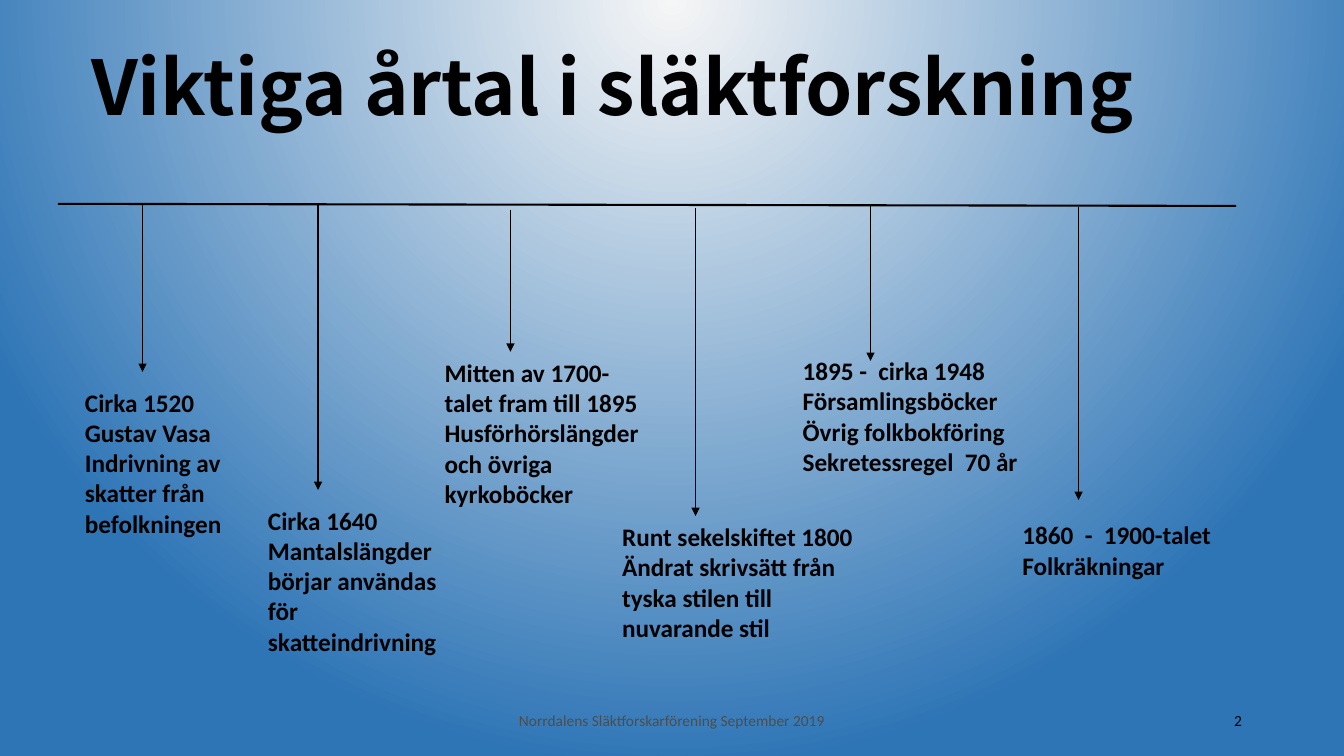
import pptx
import pptx.util
import pptx.dml.color
import pptx.enum.shapes
import pptx.enum.text
import pptx.oxml
import pptx.oxml.ns

Pt = pptx.util.Pt
RGBColor = pptx.dml.color.RGBColor
ALIGN = pptx.enum.text.PP_ALIGN
ANCHOR = pptx.enum.text.MSO_ANCHOR

BLACK = RGBColor(0x00, 0x00, 0x00)
GRAY = RGBColor(0x4D, 0x4D, 0x4D)
LIGHT = RGBColor(0xF6, 0xF6, 0xF6)
BLUE = RGBColor(0x2E, 0x75, 0xB6)

# Content
TITLE = "Viktiga årtal i släktforskning"
FOOTER = "Norrdalens Släktforskarförening September 2019"
PAGE_NUMBER = "2"

# Each event: arrow (x, top, bottom), text box (left, top, width, height), paragraphs
EVENTS = [
    ((101.8, 145.5, 265.7), (53.6, 272.9, 126.7, 116.6),
     ["Cirka 1520", "Gustav Vasa", "Indrivning av skatter från befolkningen"]),
    ((227.2, 145.5, 350), (184.3, 357.1, 152.6, 116.6),
     ["Cirka 1640", "Mantalslängder börjar användas för skatteindrivning"]),
    ((364.6, 149.8, 251.3), (310.5, 251.6, 158.4, 116.6),
     ["Mitten av 1700-talet fram till 1895", "Husförhörslängder",
      "och övriga kyrkoböcker"]),
    ((496.8, 148.3, 368.6), (437.3, 368.9, 190, 94.3),
     ["Runt sekelskiftet 1800",
      "Ändrat skrivsätt från tyska stilen till nuvarande stil"]),
    ((621.8, 146.9, 257.8), (566.3, 250.3, 172.8, 94.3),
     ["1895 -  cirka 1948", "Församlingsböcker", "Övrig folkbokföring",
      "Sekretessregel  70 år"]),
    ((770.4, 147.6, 357.1), (723.2, 367.6, 159.8, 51.1),
     ["1860  -  1900-talet", "Folkräkningar"]),
]

# Formats
TITLE_FONT = {"name": "Noto Sans CJK KR", "size": Pt(54), "bold": True}
EVENT_FONT = {"name": "Calibri", "size": Pt(18), "bold": True}
SMALL_FONT = {"name": "Calibri", "size": Pt(11), "bold": False}


def set_attributes(target, values):
    for name, value in values.items():
        setattr(target, name, value)


def write_text(shape, lines, font, color=BLACK, anchor=ANCHOR.TOP, **paragraph_format):
    frame = shape.text_frame
    set_attributes(frame, {"text": "\n".join(lines), "word_wrap": True,
                           "auto_size": pptx.enum.text.MSO_AUTO_SIZE.NONE,
                           "vertical_anchor": anchor})
    for paragraph in frame.paragraphs:
        set_attributes(paragraph, paragraph_format)
        for run in paragraph.runs:
            set_attributes(run.font, font)
            run.font.color.rgb = color


def add_text(box, lines, font, **options):
    shape = slide.shapes.add_textbox(*map(Pt, box))
    write_text(shape, lines, font, **options)


def add_line(start, end, width, arrow=False):
    connector = slide.shapes.add_connector(
        pptx.enum.shapes.MSO_CONNECTOR.STRAIGHT, *map(Pt, start + end))
    connector.line.width = Pt(width)
    connector.line.color.rgb = BLACK
    properties = connector._element.spPr
    namespace = pptx.oxml.ns.nsdecls("a")
    if arrow:
        properties.find(pptx.oxml.ns.qn("a:ln")).append(
            pptx.oxml.parse_xml(f'<a:tailEnd {namespace} type="triangle"/>'))
    properties.append(pptx.oxml.parse_xml(f"<a:effectLst {namespace}/>"))


presentation = pptx.Presentation()
presentation.slide_width = Pt(960)
presentation.slide_height = Pt(540)
slide = presentation.slides.add_slide(presentation.slide_layouts[5])

# Background: light glow from the top centre
fill = slide.background.fill
fill.gradient()
for stop, color in zip(fill.gradient_stops, (LIGHT, BLUE)):
    stop.color.rgb = color
linear = next(slide.background._cSld.iter(pptx.oxml.ns.qn("a:lin")))
linear.getparent().replace(linear, pptx.oxml.parse_xml(
    f'<a:path {pptx.oxml.ns.nsdecls("a")} path="circle">'
    '<a:fillToRect l="43000" t="0" r="43000" b="100000"/></a:path>'))

# Title
title = slide.shapes.title
set_attributes(title, {"left": Pt(41.3), "top": Pt(20.2),
                       "width": Pt(792), "height": Pt(90)})
write_text(title, [TITLE], TITLE_FONT, anchor=ANCHOR.MIDDLE,
           alignment=ALIGN.CENTER, line_spacing=0.9)

# Timeline with one arrow and one text per event
add_line((41.3, 145.6), (882.9, 147.1), 1.5)
for (x, top, bottom), box, lines in EVENTS:
    add_line((x, top), (x, bottom), 1, arrow=True)
    add_text(box, lines, EVENT_FONT)

# Footer and page number
add_text((318, 500.4, 324, 28.8), [FOOTER], SMALL_FONT, color=GRAY,
         anchor=ANCHOR.MIDDLE, alignment=ALIGN.CENTER)
add_text((678.2, 500.4, 216, 28.8), [PAGE_NUMBER], SMALL_FONT,
         anchor=ANCHOR.MIDDLE, alignment=ALIGN.RIGHT)

presentation.save("out.pptx")
